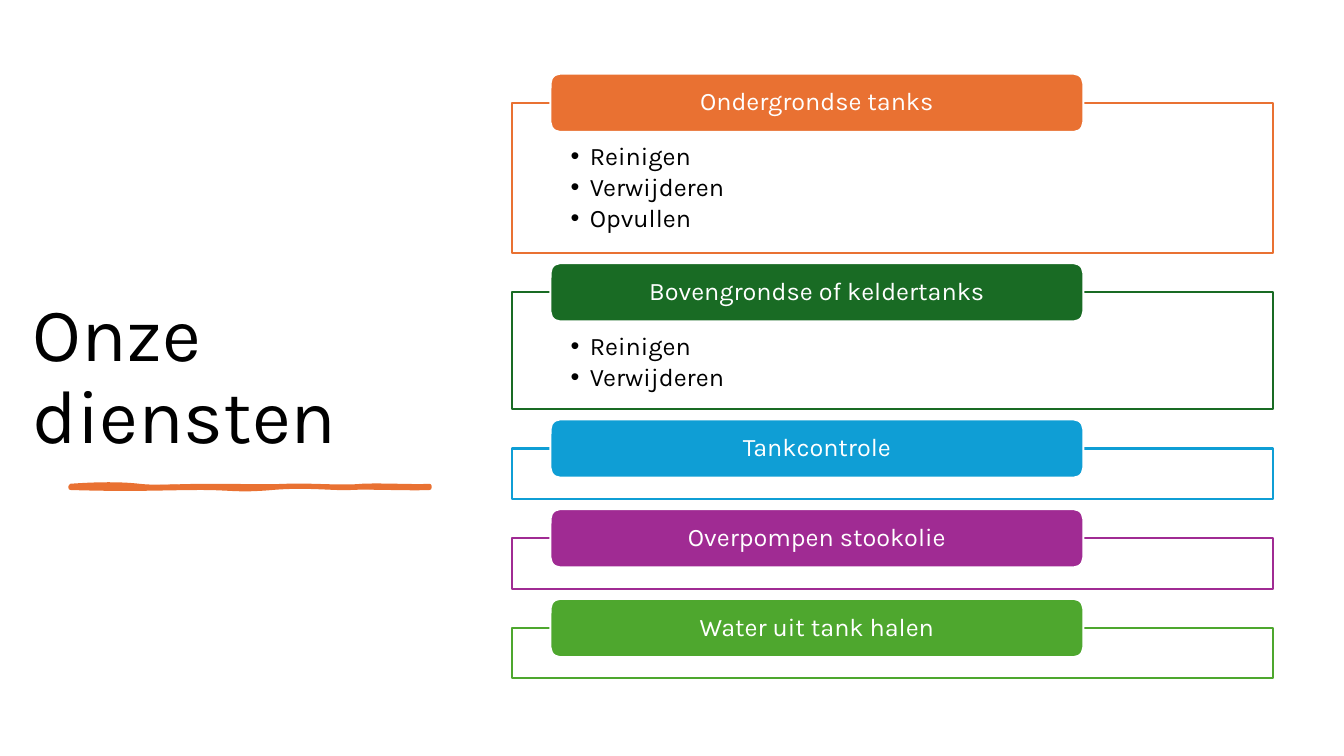
from lxml import etree
from pptx import Presentation
from pptx import util as u
from pptx.dml.color import RGBColor
from pptx.enum import shapes, text
from pptx.oxml import ns

FONT = "Karla"
COLOURS = {"orange": "E97132", "green": "196B24", "blue": "0F9ED5",
           "purple": "A02B93", "lime": "4EA72E", "white": "FFFFFF", "black": "000000"}

# heading, colour, frame height, bullets
SERVICES = [
    ("Ondergrondse tanks", "orange", 1.49, ["Reinigen", "Verwijderen", "Opvullen"]),
    ("Bovengrondse of keldertanks", "green", 1.16, ["Reinigen", "Verwijderen"]),
    ("Tankcontrole", "blue", 0.5, []),
    ("Overpompen stookolie", "purple", 0.5, []),
    ("Water uit tank halen", "lime", 0.5, []),
]
FRAME_GAP = 0.39

# Bézier points of the brush stroke in hundredths of an inch from its left end:
# a start point, then two controls and an end point for each curve
STROKE_OUTLINE = [
    (0, 0), (27, -2), (51, -2), (68, 0), (85, 2), (107, 0), (139, 0),
    (171, 0), (190, 1), (214, 0), (238, -1), (269, 2), (289, 0),
    (309, -1), (342, 1), (356, 0), (356, 1), (356, 2), (356, 2),
    (338, 3), (294, 1), (278, 2), (262, 3), (234, -1), (200, 2),
    (165, 5), (161, 2), (129, 2), (96, 2), (62, 4), (0, 2),
    (0, 2), (0, 1), (0, 0)]
STROKE_FILL = [
    (0, 0), (32, 2), (40, 1), (68, 0), (96, -1), (99, -2), (129, 0),
    (158, 2), (191, 1), (207, 0), (223, -1), (257, 3), (274, 0),
    (292, -2), (327, 4), (356, 0), (356, 1), (356, 1), (356, 2),
    (342, 2), (302, 5), (285, 2), (268, 0), (239, 2), (207, 2),
    (174, 2), (170, 2), (146, 2), (123, 3), (109, 1), (75, 2),
    (41, 3), (22, 2), (0, 2), (0, 1), (0, 1), (0, 0)]


def colour(name):
    return RGBColor.from_string(COLOURS[name])


def add_text(para, words, size, name, align, after=0):
    para.alignment = align
    para.line_spacing = 0.9
    para.space_after = u.Pt(after)
    span = para.add_run()
    span.text = words
    span.font.name = FONT
    span.font.size = u.Pt(size)
    span.font.color.rgb = colour(name)


def add_bullet(para):
    props = para._p.get_or_add_pPr()
    props.set("marL", str(u.Inches(0.19)))
    props.set("indent", str(-u.Inches(0.19)))
    etree.SubElement(props, ns.qn("a:buFont")).set("typeface", "Arial")
    etree.SubElement(props, ns.qn("a:buChar")).set("char", "•")


def add_box(slide, kind, left, top, width, height, fill, line):
    box = slide.shapes.add_shape(kind, *map(u.Inches, (left, top, width, height)))
    box.shadow.inherit = False
    box.fill.solid()
    box.fill.fore_color.rgb = colour(fill)
    box.line.color.rgb = colour(line)
    box.line.width = u.Pt(1.5)
    return box


def set_insets(frame, left, top, right, bottom):
    frame.word_wrap = True
    frame.margin_left, frame.margin_top = u.Inches(left), u.Inches(top)
    frame.margin_right, frame.margin_bottom = u.Inches(right), u.Inches(bottom)


def add_title(slide, left, top, width, height):
    title = slide.shapes.title
    title.left, title.top = u.Inches(left), u.Inches(top)
    title.width, title.height = u.Inches(width), u.Inches(height)
    frame = title.text_frame
    frame.word_wrap = True
    frame.auto_size = text.MSO_AUTO_SIZE.NONE
    frame.vertical_anchor = text.MSO_ANCHOR.BOTTOM
    add_text(frame.paragraphs[0], "Onze diensten", 54, "black", text.PP_ALIGN.LEFT)


def add_curves(outlines, points, size, **options):
    """Add one closed path of cubic Bézier curves."""
    outline = etree.SubElement(outlines, ns.qn("a:path"), **size, **options)
    for i in [0, *range(1, len(points), 3)]:
        tag, count = ("a:cubicBezTo", 3) if i else ("a:moveTo", 1)
        step = etree.SubElement(outline, ns.qn(tag))
        for x, y in points[i:i + count]:
            etree.SubElement(step, ns.qn("a:pt"), x=str(x), y=str(y))
    etree.SubElement(outline, ns.qn("a:close"))


def add_stroke(slide, left, top):
    # The curve ends give the size, then curves take the place of the straight lines
    builder = slide.shapes.build_freeform(0, 0, scale=u.Inches(1) / 100)
    builder.add_line_segments(STROKE_OUTLINE[3::3], close=True)
    stroke = builder.convert_to_shape(u.Inches(left), u.Inches(top))
    outlines = stroke._element.spPr.find(".//" + ns.qn("a:pathLst"))
    size = dict(outlines[0].attrib)
    outlines.remove(outlines[0])
    add_curves(outlines, STROKE_OUTLINE, size, fill="none")
    add_curves(outlines, STROKE_FILL, size, stroke="0")

    stroke.shadow.inherit = False
    stroke.fill.solid()
    stroke.fill.fore_color.rgb = colour("orange")
    stroke.line.color.rgb = colour("orange")
    stroke.line.width = u.Pt(3)


def add_service(slide, left, top, width, height, heading, name, bullets):
    # Frame with its bullets
    frame_box = add_box(slide, shapes.MSO_SHAPE.RECTANGLE, left, top, width, height,
                        "white", name)
    tint = frame_box._element.spPr.find(ns.qn("a:solidFill"))[0]
    etree.SubElement(tint, ns.qn("a:alpha")).set("val", "90000")
    if bullets:
        frame = frame_box.text_frame
        set_insets(frame, 0.58, 0.41, 0.58, 0.14)
        frame.vertical_anchor = text.MSO_ANCHOR.TOP
        for i, words in enumerate(bullets):
            para = frame.add_paragraph() if i else frame.paragraphs[0]
            add_bullet(para)
            add_text(para, words, 18, "black", text.PP_ALIGN.LEFT, after=2.7)

    # Heading on the frame's top edge
    label = add_box(slide, shapes.MSO_SHAPE.ROUNDED_RECTANGLE, left + 0.38, top - 0.29,
                    width * 0.7, 0.58, name, "white")
    set_insets(label.text_frame, 0.2, 0, 0.2, 0)
    label.text_frame.vertical_anchor = text.MSO_ANCHOR.MIDDLE
    add_text(label.text_frame.paragraphs[0], heading, 18, "white", text.PP_ALIGN.CENTER)


def add_services(slide, left, top, width):
    for heading, name, height, bullets in SERVICES:
        add_service(slide, left, top, width, height, heading, name, bullets)
        top += height + FRAME_GAP


def main():
    deck = Presentation()
    deck.slide_width, deck.slide_height = u.Inches(13.33), u.Inches(7.5)
    slide = deck.slides.add_slide(deck.slide_layouts[5])
    add_title(slide, 0.22, 0.7, 4.59, 3.91)
    add_stroke(slide, 0.7, 4.82)
    add_services(slide, 5.08, 1.02, 7.55)
    deck.save("out.pptx")


if __name__ == "__main__":
    main()
